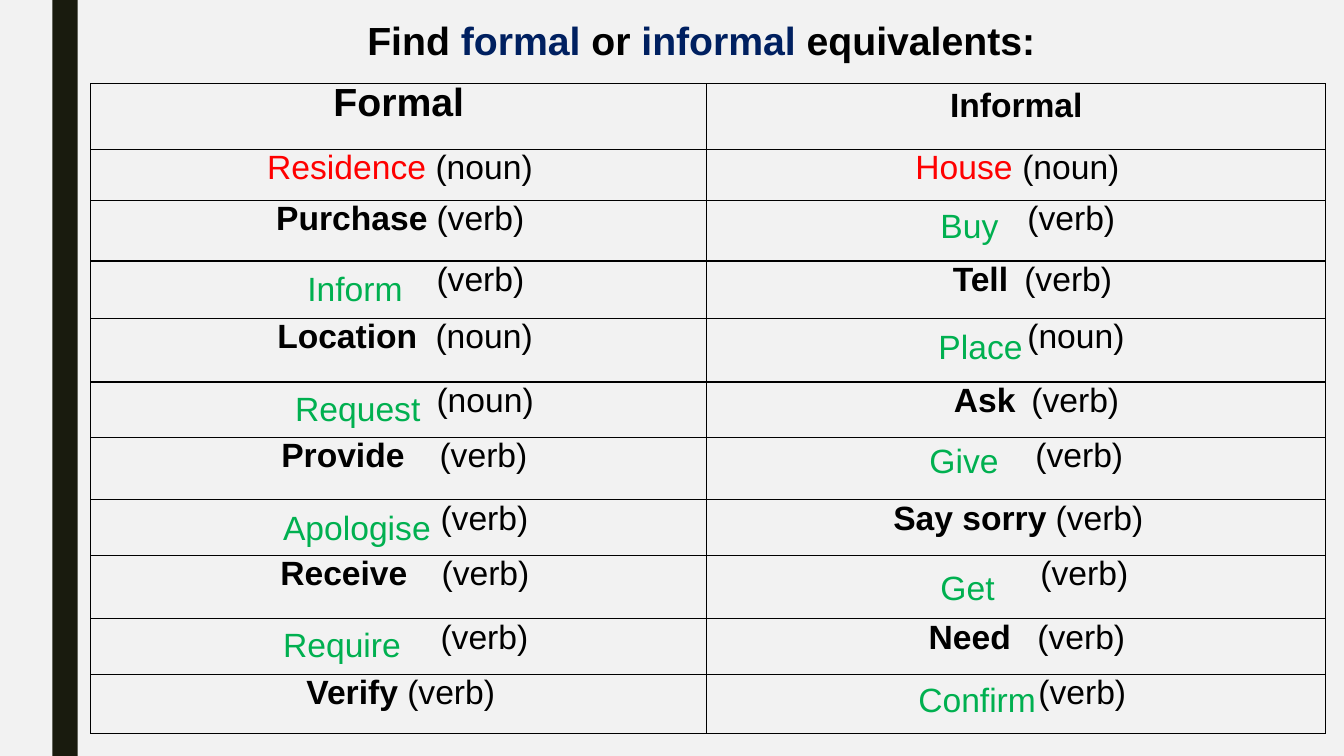
from lxml.etree import SubElement
from pptx import Presentation
from pptx.dml.color import RGBColor
from pptx.enum.shapes import MSO_SHAPE
from pptx.enum.text import MSO_ANCHOR, PP_ALIGN
from pptx.oxml import parse_xml
from pptx.oxml.ns import nsdecls, qn
from pptx.util import Inches, Pt

COLORS = {"page": "F2F2F2", "bar": "191B0E", "ink": "000000",
          "navy": "002060", "sample": "FF0000", "answer": "00B050"}
COLS = [6.11, 6.14]
ROWS = [0.65, 0.51, 0.6, 0.57, 0.63, 0.55, 0.62, 0.55, 0.63, 0.55, 0.59]
HEADS = [("Formal", 28, 0, 0.93), ("Informal", 24, 0.03, 1.0)]

# Each entry: style, word, word offset, kind, kind offset, drop below row top.
PAIRS = [
    (("sample", "Residence", 1.75, "(noun)", 3.42, 0),
     ("sample", "House", 2.07, "(noun)", 3.13, 0)),
    (("given", "Purchase", 1.84, "(verb)", 3.43, 0),
     ("answer", "Buy", 2.22, "(verb)", 3.18, -0.01)),
    (("answer", "Inform", 2.05, "(verb)", 3.43, 0.02),
     ("given", "Tell", 2.44, "(verb)", 3.15, 0)),
    (("given", "Location", 1.85, "(noun)", 3.42, 0),
     ("answer", "Place", 2.2, "(noun)", 3.18, 0.02)),
    (("answer", "Request", 1.93, "(noun)", 3.43, 0.01),
     ("given", "Ask", 2.45, "(verb)", 3.22, 0)),
    (("given", "Provide", 1.89, "(verb)", 3.46, 0),
     ("answer", "Give", 2.11, "(verb)", 3.26, -0.02)),
    (("answer", "Apologise", 1.81, "(verb)", 3.47, 0.02),
     ("given", "Say sorry", 1.85, "(verb)", 3.46, 0)),
    (("given", "Receive", 1.88, "(verb)", 3.48, 0),
     ("answer", "Get", 2.22, "(verb)", 3.31, 0.07)),
    (("answer", "Require", 1.81, "(verb)", 3.47, 0),
     ("given", "Need", 2.2, "(verb)", 3.28, 0)),
    (("given", "Verify", 2.14, "(verb)", 3.14, 0),
     ("answer", "Confirm", 2.0, "(verb)", 3.29, 0)),
]


def add_run(para, text, size=24, color="ink", bold=False):
    """Append a styled run to a paragraph."""
    run = para.add_run()
    run.text = text
    font = run.font
    font.name, font.size, font.bold = "Arial", Pt(size), bold
    font.color.rgb = RGBColor.from_string(COLORS[color])


def add_bar(slide, left, top, width, height):
    """Draw the dark side bar."""
    bar = slide.shapes.add_shape(MSO_SHAPE.RECTANGLE, Inches(left), Inches(top),
                                 Inches(width), Inches(height))
    bar.shadow.inherit = False
    bar.fill.solid()
    bar.fill.fore_color.rgb = RGBColor.from_string(COLORS["bar"])
    bar.line.fill.background()


def add_title(slide, left, top, width, height):
    """Place and fill the title."""
    title = slide.shapes.title
    title.left, title.top = Inches(left), Inches(top)
    title.width, title.height = Inches(width), Inches(height)
    frame = title.text_frame
    frame.vertical_anchor = MSO_ANCHOR.MIDDLE
    para = frame.paragraphs[0]
    para.alignment = PP_ALIGN.CENTER
    for text, color in [("Find ", "ink"), ("formal", "navy"), (" or ", "ink"),
                        ("informal", "navy"), (" equivalents:", "ink")]:
        add_run(para, text, 28, color, True)


def clear_cell(cell):
    """Give a cell thin borders, no fill and no margins."""
    cell.fill.background()
    cell.margin_left = cell.margin_right = cell.margin_top = cell.margin_bottom = 0
    props = cell._tc.get_or_add_tcPr()
    for i, side in enumerate(["lnL", "lnR", "lnT", "lnB"]):
        props.insert(i, parse_xml(
            f'<a:{side} {nsdecls("a")} w="{Pt(1)}"><a:solidFill>'
            f'<a:srgbClr val="{COLORS["ink"]}"/></a:solidFill></a:{side}>'))


def fill_head(cell, text, size, top, spacing):
    """Write a column heading."""
    cell.margin_top = Inches(top)
    para = cell.text_frame.paragraphs[0]
    para.alignment = PP_ALIGN.CENTER
    para.line_spacing = spacing
    add_run(para, text, size, bold=True)


def fill_entry(cell, style, word, start, kind, stop):
    """Write a word and its kind, or the kind alone beside an answer."""
    para = cell.text_frame.paragraphs[0]
    para.alignment = PP_ALIGN.LEFT
    if style == "answer":
        cell.margin_left = Inches(stop)
    else:
        cell.margin_left = Inches(start)
        tabs = SubElement(para._p.get_or_add_pPr(), qn("a:tabLst"))
        SubElement(tabs, qn("a:tab"), pos=str(Inches(stop - start)), algn="l")
        color = "sample" if style == "sample" else "ink"
        add_run(para, word + "\t", color=color, bold=style == "given")
    add_run(para, kind)


def add_answer(slide, word, left, top):
    """Place a green answer over the table."""
    box = slide.shapes.add_textbox(Inches(left), Inches(top), Inches(1.8), Inches(0.5))
    box.text_frame.word_wrap = True
    add_run(box.text_frame.paragraphs[0], word, color="answer")


def add_grid(slide, left, top):
    """Build the table of pairs and lay the answers over it."""
    table = slide.shapes.add_table(len(ROWS), len(COLS), Inches(left), Inches(top),
                                   Inches(sum(COLS)), Inches(sum(ROWS))).table
    table.first_row = table.horz_banding = False
    for col, width in zip(table.columns, COLS):
        col.width = Inches(width)
    for row, height in zip(table.rows, ROWS):
        row.height = Inches(height)
    for cell in table.iter_cells():
        clear_cell(cell)
    for c, head in enumerate(HEADS):
        fill_head(table.cell(0, c), *head)
    for r, pair in enumerate(PAIRS, 1):
        for c, (style, word, start, kind, stop, drop) in enumerate(pair):
            fill_entry(table.cell(r, c), style, word, start, kind, stop)
            if style == "answer":
                add_answer(slide, word, left + sum(COLS[:c]) + start,
                           top + sum(ROWS[:r]) + drop)


def main():
    """Build and save the slide."""
    deck = Presentation()
    deck.slide_width, deck.slide_height = Inches(13.33), Inches(7.5)
    slide = deck.slides.add_slide(deck.slide_layouts[5])
    fill = slide.background.fill
    fill.solid()
    fill.fore_color.rgb = RGBColor.from_string(COLORS["page"])
    add_bar(slide, 0.52, 0, 0.25, 7.5)
    add_title(slide, 1.02, 0.08, 11.87, 0.64)
    add_grid(slide, 0.9, 0.83)
    deck.save("out.pptx")


if __name__ == "__main__":
    main()
